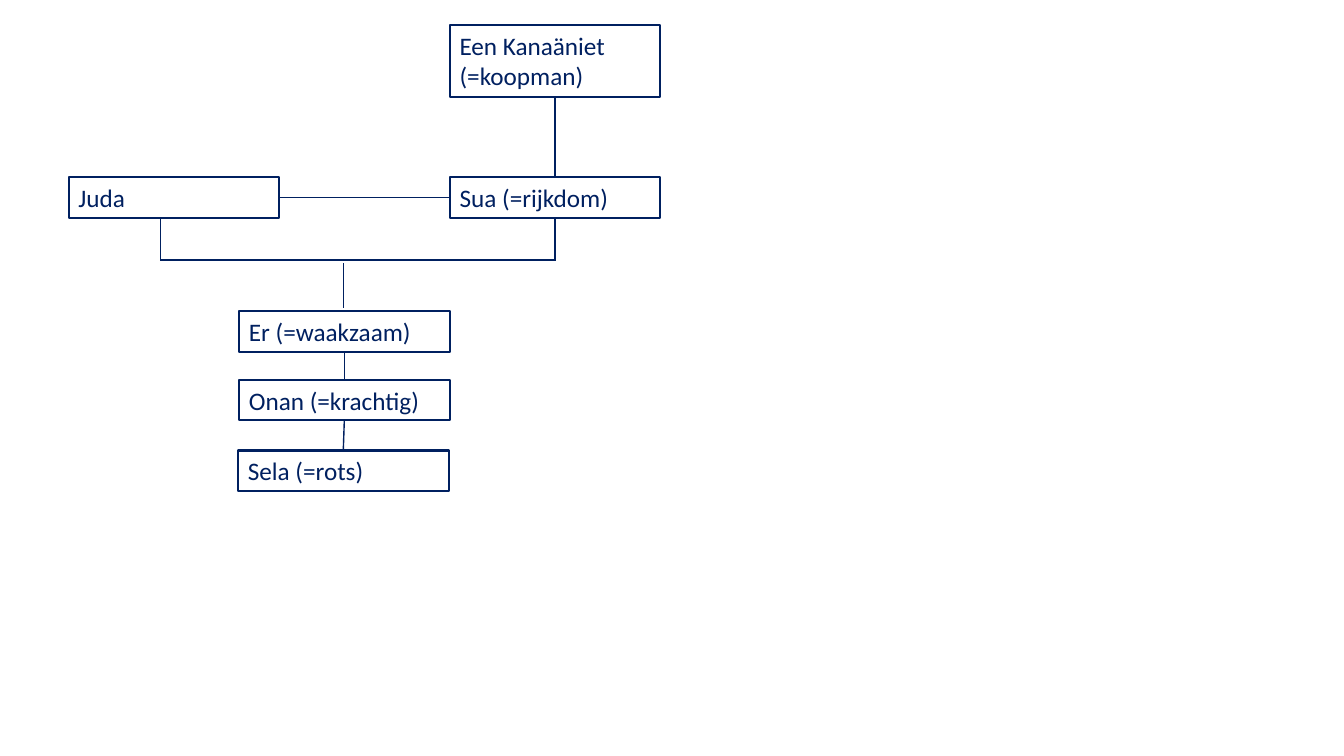
from pptx import Presentation
from pptx.dml.color import RGBColor
from pptx.enum.shapes import MSO_CONNECTOR as Connector, MSO_SHAPE as Shape
from pptx.enum.text import MSO_ANCHOR as Anchor, MSO_AUTO_SIZE as AutoSize, PP_ALIGN as Align
from pptx.oxml.ns import qn
from pptx.util import Inches, Pt
from lxml import etree

NAVY = "002060"
FONT = "Calibri"
BOX_WIDTH, BOX_HEIGHT = 2.09, 0.4
TOP, LEFT, BOTTOM, RIGHT = range(4)


def color(hex_value):
    return RGBColor.from_string(hex_value)


def add_person(slide, left, top, *lines, height=BOX_HEIGHT):
    """Add an outlined name box with one paragraph per line."""
    box = slide.shapes.add_shape(Shape.RECTANGLE, Inches(left), Inches(top),
                                 Inches(BOX_WIDTH), Inches(height))
    box.shadow.inherit = False
    box.fill.background()
    box.line.color.rgb = color(NAVY)
    box.line.width = Pt(1.5)
    frame = box.text_frame
    frame.word_wrap = True
    frame.auto_size = AutoSize.SHAPE_TO_FIT_TEXT
    frame.vertical_anchor = Anchor.TOP
    for index, line in enumerate(lines):
        paragraph = frame.add_paragraph() if index else frame.paragraphs[0]
        paragraph.alignment = Align.LEFT
        run = paragraph.add_run()
        run.text = line
        run.font.name = FONT
        run.font.size = Pt(18)
        run.font.color.rgb = color(NAVY)
    return box


def add_line(slide, start=(0, 0), end=(0, 0)):
    """Add a thin straight line between two points."""
    line = slide.shapes.add_connector(Connector.STRAIGHT, *map(Inches, start + end))
    line.line.color.rgb = color(NAVY)
    line.line.width = Pt(1)
    etree.SubElement(line._element.spPr, qn("a:effectLst"))
    return line


def join(slide, first, first_side, second, second_side):
    """Connect the side middles of two boxes."""
    line = add_line(slide)
    line.begin_connect(first, first_side)
    line.end_connect(second, second_side)


def main():
    presentation = Presentation()
    presentation.slide_width = Inches(13.33)
    presentation.slide_height = Inches(7.5)
    slide = presentation.slides.add_slide(presentation.slide_layouts[6])

    # Parents and grandfather
    juda = add_person(slide, 0.68, 1.76, "Juda")
    sua = add_person(slide, 4.46, 1.76, "Sua (=rijkdom)")
    canaanite = add_person(slide, 4.46, 0.25, "Een Kanaäniet", "(=koopman)", height=0.71)
    join(slide, juda, RIGHT, sua, LEFT)
    join(slide, canaanite, BOTTOM, sua, TOP)

    # Bracket from the parents down to the sons
    juda_x, sua_x, sons_x = 1.59, 5.51, 3.41
    parents_bottom, bracket_y = 2.16, 2.58
    add_line(slide, (juda_x, parents_bottom), (juda_x, bracket_y))
    bracket_end = add_line(slide, (sua_x, parents_bottom), (sua_x, bracket_y))
    bracket_end.begin_connect(sua, BOTTOM)
    bracket_end.end_x, bracket_end.end_y = bracket_end.begin_x, Inches(bracket_y)
    add_line(slide, (juda_x, bracket_y), (sua_x, bracket_y))
    add_line(slide, (sons_x, 2.61), (sons_x, 3.06))

    # Sons
    er = add_person(slide, 2.37, 3.09, "Er (=waakzaam)")
    onan = add_person(slide, 2.37, 3.77, "Onan (=krachtig)")
    sela = add_person(slide, 2.36, 4.47, "Sela (=rots)")
    join(slide, er, BOTTOM, onan, TOP)
    join(slide, onan, BOTTOM, sela, TOP)

    presentation.save("out.pptx")


if __name__ == "__main__":
    main()
